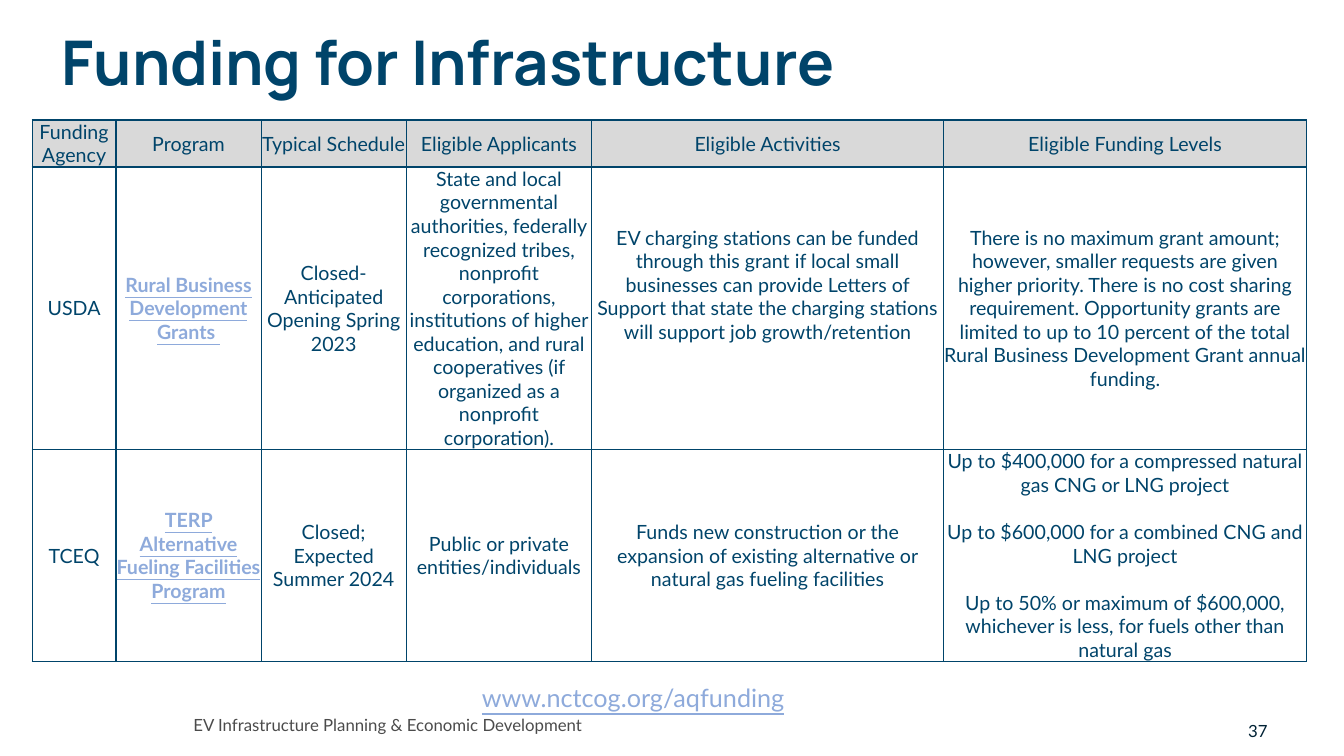
from pptx import Presentation
from pptx.dml.color import RGBColor
from pptx.enum.text import MSO_ANCHOR as Anchor, PP_ALIGN as Align
from pptx.oxml import parse_xml
from pptx.oxml.ns import nsdecls
from pptx.util import Pt

NAVY, LINK, GREY, WHITE = "00446A", "8EAADB", "D9D9D9", "FFFFFF"


def px(n):
    return n * 9144


def rgb(value):
    return RGBColor.from_string(value)


class Deck:
    font = "Lato"
    border = NAVY

    def __init__(self, width, height):
        self.prs = Presentation()
        self.prs.slide_width, self.prs.slide_height = px(width), px(height)
        self.s = self.prs.slides.add_slide(self.prs.slide_layouts[6])

    def run(self, p, text, size, color, bold=False, underline=False, font=None):
        r = p.add_run()
        r.text = text
        r.font.name = font or self.font
        r.font.size = Pt(size)
        r.font.bold = bold
        r.font.underline = underline
        r.font.color.rgb = rgb(color)

    def text(self, box, text, size, color, align=Align.LEFT, spacing=1.0, **style):
        tf = self.s.shapes.add_textbox(*map(px, box)).text_frame
        tf.word_wrap = True
        tf.vertical_anchor = Anchor.MIDDLE
        p = tf.paragraphs[0]
        p.alignment = align
        p.line_spacing = spacing
        self.run(p, text, size, color, **style)

    def cell(self, cell, paragraphs, fill, bottom=0, **style):
        tcPr = cell._tc.get_or_add_tcPr()
        for side in "LRTB":
            tcPr.append(parse_xml(
                f'<a:ln{side} {nsdecls("a")} w="12700"><a:solidFill>'
                f'<a:srgbClr val="{self.border}"/></a:solidFill></a:ln{side}>'))
        cell.fill.solid()
        cell.fill.fore_color.rgb = rgb(fill)
        cell.vertical_anchor = Anchor.MIDDLE
        cell.margin_left = cell.margin_right = cell.margin_top = 0
        cell.margin_bottom = px(bottom)
        tf = cell.text_frame
        for i, text in enumerate(paragraphs):
            p = tf.add_paragraph() if i else tf.paragraphs[0]
            p.alignment = Align.CENTER
            if i:
                p.space_before = Pt(16.8)
            self.run(p, text, 14, **style)

    def table(self, left, top, widths, heights, rows):
        tbl = self.s.shapes.add_table(
            len(rows), len(widths), px(left), px(top),
            px(sum(widths)), px(sum(heights))).table
        tbl.first_row = tbl.horz_banding = False
        for col, width in zip(tbl.columns, widths):
            col.width = px(width)
        for row, height in zip(tbl.rows, heights):
            row.height = px(height)
        for i, row in enumerate(rows):
            for j, text in enumerate(row):
                linked = i > 0 and j == 1
                self.cell(tbl.cell(i, j), text.split("\n"),
                          WHITE if i else GREY,
                          bottom=47 if (i, j) == (1, 4) else 0,
                          color=LINK if linked else NAVY,
                          bold=linked, underline=linked)


ROWS = [
    ["Funding Agency", "Program", "Typical Schedule", "Eligible Applicants",
     "Eligible Activities", "Eligible Funding Levels"],
    ["USDA", "Rural Business Development Grants ",
     "Closed- Anticipated Opening Spring 2023",
     "State and local governmental authorities, federally recognized tribes, "
     "nonprofit corporations, institutions of higher education, and rural "
     "cooperatives (if organized as a nonprofit corporation).",
     "EV charging stations can be funded through this grant if local small "
     "businesses can provide Letters of Support that state the charging "
     "stations will support job growth/retention",
     "There is no maximum grant amount; however, smaller requests are given "
     "higher priority. There is no cost sharing requirement. Opportunity "
     "grants are limited to up to 10 percent of the total Rural Business "
     "Development Grant annual funding."],
    ["TCEQ", "TERP Alternative Fueling Facilities Program",
     "Closed; Expected Summer 2024", "Public or private entities/individuals",
     "Funds new construction or the expansion of existing alternative or "
     "natural gas fueling facilities",
     "Up to $400,000 for a compressed natural gas CNG or LNG project\n"
     "Up to $600,000 for a combined CNG and LNG project\n"
     "Up to 50% or maximum of $600,000, whichever is less, for fuels other "
     "than natural gas"],
]


def main():
    deck = Deck(1333, 750)
    deck.text((51, -8, 1150, 145), "Funding for Infrastructure", 44, NAVY,
              spacing=0.9, bold=True, font="Manrope")
    deck.table(32, 119, [83, 144, 144, 184, 349, 360], [46, 280, 210], ROWS)
    deck.text((51, 672, 1154, 40), "www.nctcog.org/aqfunding", 18, LINK,
              Align.CENTER, underline=True)
    deck.text((182, 699, 480, 40),
              "EV Infrastructure Planning & Economic Development", 12, "4B4B4B")
    deck.text((967, 705, 300, 40), "37", 12, "002235", Align.RIGHT)
    deck.prs.save("out.pptx")


if __name__ == "__main__":
    main()
